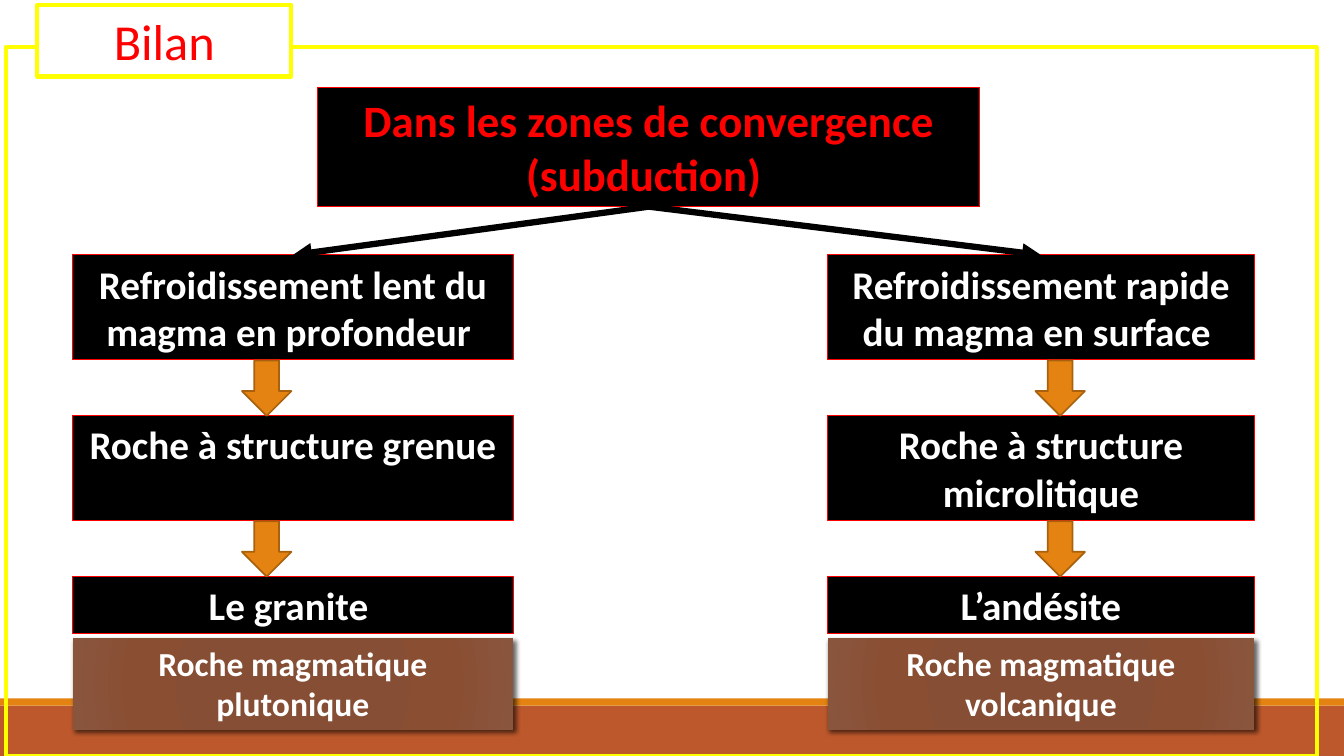
from lxml.etree import SubElement
from pptx import Presentation
from pptx.dml.color import RGBColor
from pptx.enum.shapes import MSO_CONNECTOR as CONNECTOR, MSO_SHAPE as SHAPE
from pptx.enum.text import MSO_ANCHOR as ANCHOR, MSO_AUTO_SIZE as AUTO, PP_ALIGN as ALIGN
from pptx.oxml import parse_xml
from pptx.oxml.ns import nsdecls, qn
from pptx.util import Inches, Pt

BLACK, WHITE, RED, YELLOW = "000000", "FFFFFF", "FF0000", "FFFF00"
ORANGE, RUST, BROWN = "E48312", "BD582C", "A9610D"

GRADIENT = f"""<a:gradFill {nsdecls('a')} rotWithShape="1"><a:gsLst>
<a:gs pos="0"><a:srgbClr val="874C32"/></a:gs><a:gs pos="34000"><a:srgbClr val="864E34"/></a:gs>
<a:gs pos="70000"><a:srgbClr val="8A4E33"/></a:gs><a:gs pos="100000"><a:srgbClr val="8A553D"/></a:gs>
</a:gsLst><a:path path="circle"><a:fillToRect l="100000" t="100000" r="100000" b="100000"/></a:path></a:gradFill>"""
SHADOW = f"""<a:outerShdw {nsdecls('a')} blurRad="44450" dist="25400" dir="2700000" algn="tl" rotWithShape="0">
<a:srgbClr val="000000"><a:alpha val="60000"/></a:srgbClr></a:outerShdw>"""

deck = Presentation()
deck.slide_width, deck.slide_height = Inches(13.33), Inches(7.5)
page = deck.slides.add_slide(deck.slide_layouts[5])
shapes = page.shapes


def add_block(kind, left, top, width, height, fill=None, line=None, weight=0.75):
    block = shapes.add_shape(kind, Inches(left), Inches(top), Inches(width), Inches(height))
    block.shadow.inherit = False
    if fill:
        block.fill.solid()
        block.fill.fore_color.rgb = RGBColor.from_string(fill)
    else:
        block.fill.background()
    if line:
        block.line.color.rgb = RGBColor.from_string(line)
        block.line.width = Pt(weight)
    else:
        block.line.fill.background()
    return block


def write(box, text, size, color, bold=True):
    frame = box.text_frame
    frame.word_wrap = True
    frame.auto_size = AUTO.NONE
    frame.vertical_anchor = ANCHOR.TOP
    frame.text = text
    para = frame.paragraphs[0]
    para.alignment = ALIGN.CENTER
    para.font.name, para.font.size, para.font.bold = "Calibri", Pt(size), bold
    para.font.color.rgb = RGBColor.from_string(color)


# Bands at the foot of the slide
add_block(SHAPE.RECTANGLE, 0, 7, 13.33, 0.5, RUST)
add_block(SHAPE.RECTANGLE, 0, 6.93, 13.33, 0.07, ORANGE)

# Starting point of the diagram
zone = add_block(SHAPE.RECTANGLE, 3.15, 0.87, 6.57, 1.18, BLACK, RED)
write(zone, "Dans les zones de convergence (subduction) ", 32, RED)

# Two branches: left edge, width, arrow position, three steps and the rock family
branches = [
    (0.72, 4.37, 2.4, ["Refroidissement lent du magma en profondeur ",
                       "Roche à structure grenue", "Le granite "],
     "Roche magmatique plutonique"),
    (8.21, 4.23, 10.27, ["Refroidissement rapide du magma en surface ",
                         "Roche à structure microlitique", "L’andésite"],
     "Roche magmatique volcanique"),
]
FIRST_TOP, STEP_PITCH = 2.53, 1.595
STEP_HEIGHTS = [1.04, 1.04, 0.57]

for left, width, arrow_left, steps, family in branches:
    step_boxes = []
    for row, (text, height) in enumerate(zip(steps, STEP_HEIGHTS)):
        top = FIRST_TOP + row * STEP_PITCH
        box = add_block(SHAPE.RECTANGLE, left, top, width, height, BLACK, RED)
        write(box, text, 28, WHITE)
        step_boxes.append(box)
        if row:
            add_block(SHAPE.DOWN_ARROW, arrow_left, top - 0.55, 0.49, 0.55, ORANGE, BROWN, 1.25)

    # Rock family with gradient and shadow
    family_box = add_block(SHAPE.RECTANGLE, left, 6.33, width, 0.91)
    properties = family_box._element.spPr
    properties.replace(properties.find(qn("a:noFill")), parse_xml(GRADIENT))
    properties.find(qn("a:effectLst")).append(parse_xml(SHADOW))
    write(family_box, family, 24, WHITE)

    # Arrow from the starting point to the first step
    link = shapes.add_connector(CONNECTOR.STRAIGHT, 0, 0, 0, 0)
    link.begin_connect(zone, 2)
    link.end_connect(step_boxes[0], 0)
    link.line.color.rgb = RGBColor.from_string(BLACK)
    link.line.width = Pt(4.5)
    SubElement(link.line._get_or_add_ln(), qn("a:tailEnd"), type="triangle")
    SubElement(link._element.spPr, qn("a:effectLst"))

# Yellow frame
add_block(SHAPE.RECTANGLE, 0.06, 0.47, 13, 7.03, None, YELLOW, 3)

# Title, brought in front of the frame
title = shapes.title
title.left, title.top, title.width, title.height = map(Inches, (0.37, 0.05, 2.52, 0.71))
title.fill.solid()
title.fill.fore_color.rgb = RGBColor.from_string(WHITE)
title.line.color.rgb = RGBColor.from_string(YELLOW)
title.line.width = Pt(3)
write(title, "Bilan", 36, RED, False)
shapes._spTree.append(title._element)

deck.save("out.pptx")
